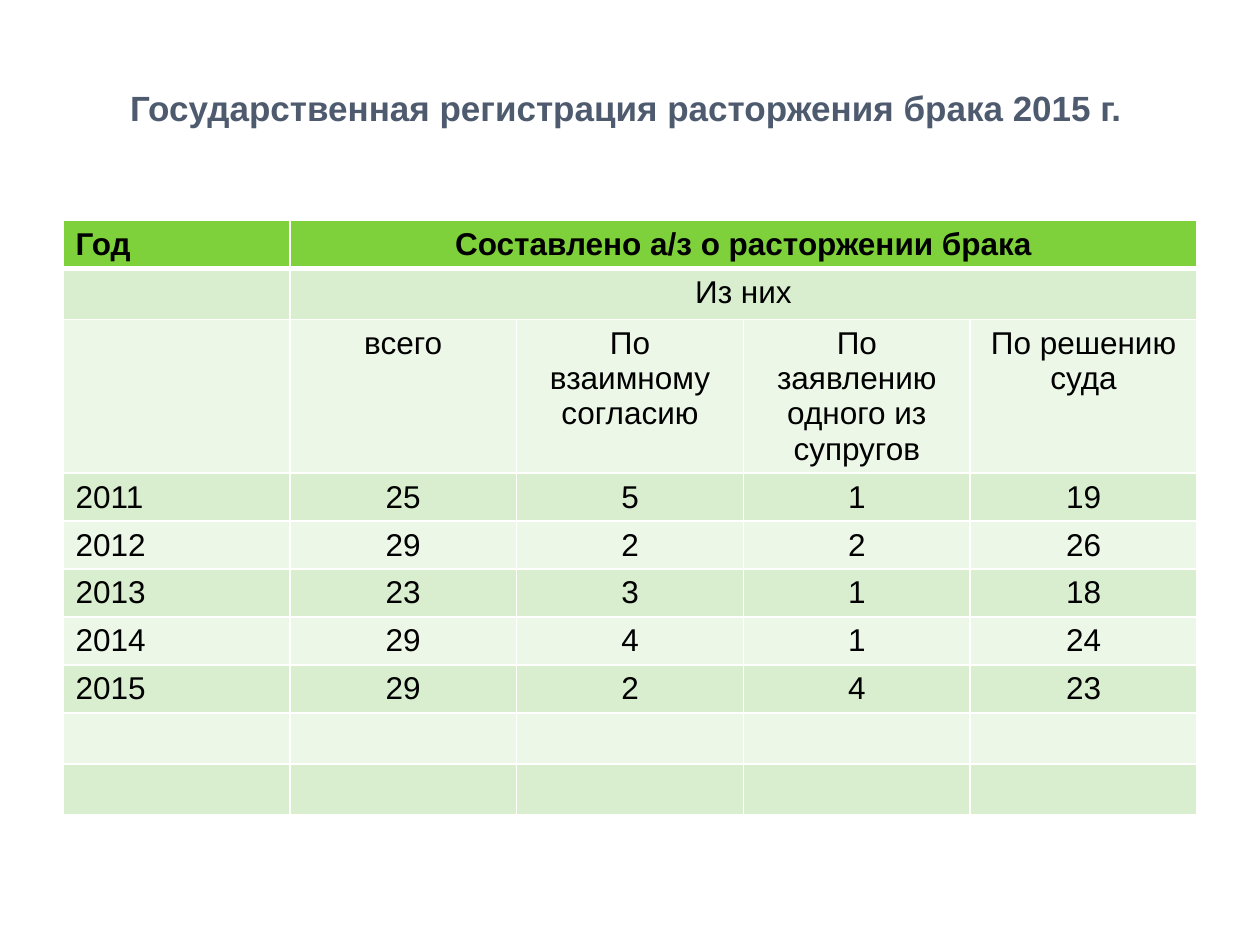
from lxml.etree import SubElement
from pptx import Presentation
from pptx.dml.color import RGBColor
from pptx.enum.text import MSO_ANCHOR, PP_ALIGN
from pptx.oxml.ns import qn
from pptx.util import Pt

SLATE = RGBColor(0x4E, 0x5B, 0x6F)
BLACK = RGBColor(0, 0, 0)
WHITE = RGBColor(0xFF, 0xFF, 0xFF)
GREEN = RGBColor(0x7F, 0xD1, 0x3B)
LIGHT_GREEN = RGBColor(0xD8, 0xEE, 0xCE)
PALE_GREEN = RGBColor(0xEC, 0xF7, 0xE8)

TITLE = "Государственная регистрация расторжения брака 2015 г."
ROWS = [
    ["Год", "Составлено а/з о расторжении брака", "", "", ""],
    ["", "Из них", "", "", ""],
    ["", "всего", "По взаимному согласию",
     "По заявлению одного из супругов", "По решению суда"],
    ["2011", "25", "5", "1", "19"],
    ["2012", "29", "2", "2", "26"],
    ["2013", "23", "3", "1", "18"],
    ["2014", "29", "4", "1", "24"],
    ["2015", "29", "2", "4", "23"],
    [""] * 5,
    [""] * 5,
]


class SlideBuilder:
    """Holds the text style and the slide being built."""

    def __init__(self, slide, font_name):
        self.slide = slide
        self.font_name = font_name

    def add_text(self, frame, text, align, color, **format_values):
        para = frame.paragraphs[0]
        para.alignment = align
        if not text:
            return
        span = para.add_run()
        span.text = text
        for name, value in {"name": self.font_name, **format_values}.items():
            setattr(span.font, name, value)
        span.font.color.rgb = color

    def title(self, text, left, top, width, height):
        box = self.slide.shapes.title
        place = {"left": left, "top": top, "width": width, "height": height}
        for name, value in place.items():
            setattr(box, name, Pt(value))
        box.text_frame.word_wrap = True
        box.text_frame.vertical_anchor = MSO_ANCHOR.MIDDLE
        self.add_text(box.text_frame, text, PP_ALIGN.CENTER, SLATE,
                      size=Pt(20), bold=True)

    def borders(self, cell, widths):
        properties = cell._tc.get_or_add_tcPr()
        for side, width in widths.items():
            line = SubElement(properties, qn(f"a:ln{side}"), w=str(Pt(width)))
            fill = SubElement(line, qn("a:solidFill"))
            SubElement(fill, qn("a:srgbClr"), val=str(WHITE))

    def table(self, rows, left, top, column_width, heights, merged_rows):
        columns = len(rows[0])
        table = self.slide.shapes.add_table(
            len(rows), columns, Pt(left), Pt(top),
            Pt(column_width * columns), Pt(sum(heights))).table
        for column in table.columns:
            column.width = Pt(column_width)
        for r, (values, height) in enumerate(zip(rows, heights)):
            table.rows[r].height = Pt(height)
            band = LIGHT_GREEN if r % 2 else PALE_GREEN
            for c, text in enumerate(values):
                cell = table.cell(r, c)
                self.borders(cell, {"L": 1, "R": 1, "T": 3 if r == 1 else 1,
                                    "B": 3 if r == 0 else 1})
                cell.fill.solid()
                cell.fill.fore_color.rgb = band if r else GREEN
                self.add_text(cell.text_frame, text,
                              PP_ALIGN.CENTER if c else PP_ALIGN.LEFT, BLACK,
                              size=Pt(18), bold=r == 0)
        for r in merged_rows:
            table.cell(r, 1).merge(table.cell(r, columns - 1))


def main():
    deck = Presentation()
    deck.slide_width, deck.slide_height = Pt(720), Pt(540)
    page = SlideBuilder(deck.slides.add_slide(deck.slide_layouts[5]), "Arial")
    page.title(TITLE, 33.84, 16.56, 648, 90)
    heights = [87.4 if r == 2 else 27.4 for r in range(len(ROWS))]
    page.table(ROWS, 36, 126, 129.6, heights, merged_rows=(0, 1))
    deck.save("out.pptx")


if __name__ == "__main__":
    main()
